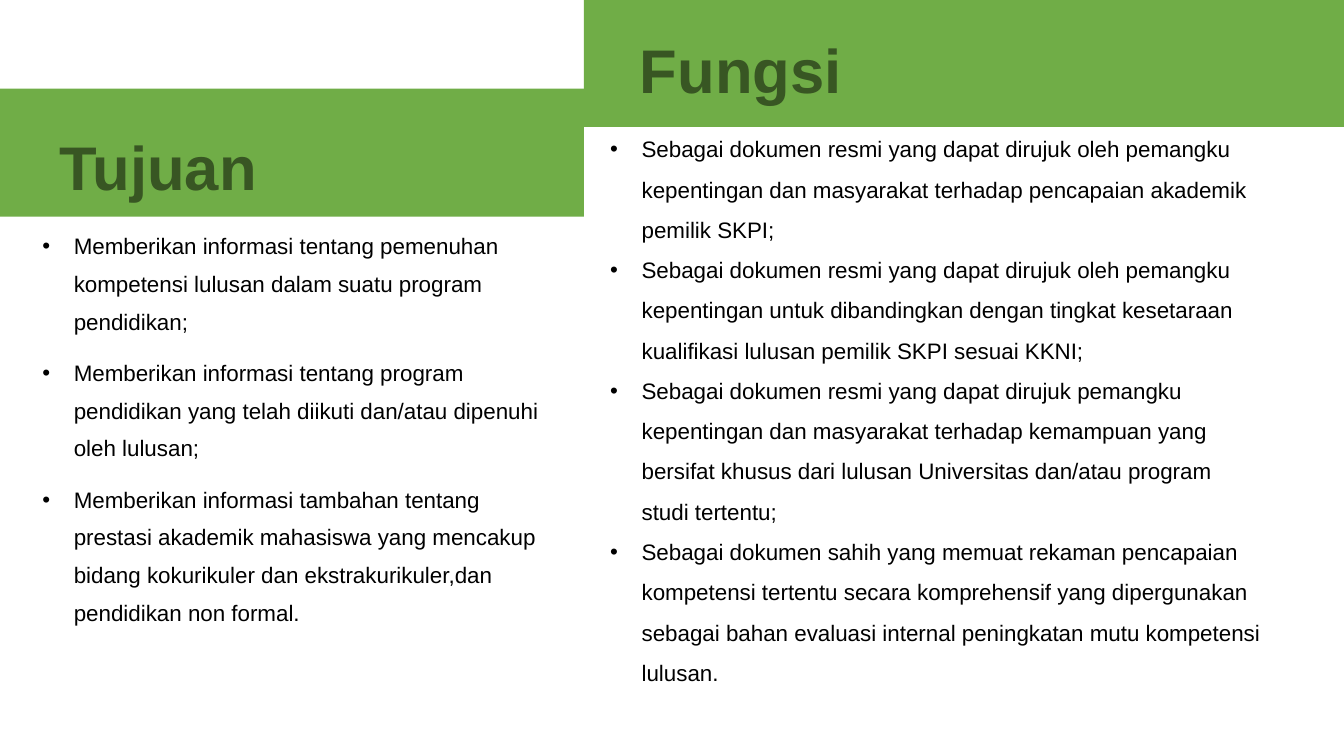
from dataclasses import dataclass

from lxml.etree import SubElement
from pptx import Presentation
from pptx.dml.color import RGBColor
from pptx.enum.shapes import MSO_SHAPE
from pptx.enum.text import MSO_ANCHOR, MSO_AUTO_SIZE, PP_ALIGN
from pptx.oxml.ns import qn
from pptx.util import Pt


@dataclass(frozen=True)
class Theme:
    """Colours, font and type sizes of the slide."""
    green: RGBColor = RGBColor(0x70, 0xAD, 0x47)
    dark: RGBColor = RGBColor(0x38, 0x56, 0x23)
    black: RGBColor = RGBColor(0, 0, 0)
    face: str = "Arial"
    head: Pt = Pt(44)
    text: Pt = Pt(16)


THEME = Theme()
INDENT = Pt(22.5)
SPLIT = 417
WIDE = 960
BAND = 91.44

GOALS = [
    "Memberikan informasi tentang pemenuhan kompetensi lulusan dalam suatu program pendidikan;",
    "Memberikan informasi tentang program pendidikan yang telah diikuti dan/atau dipenuhi oleh lulusan;",
    "Memberikan informasi tambahan tentang prestasi akademik mahasiswa yang mencakup bidang "
    "kokurikuler dan ekstrakurikuler,dan pendidikan non formal.",
]
ROLES = [
    "Sebagai dokumen resmi yang dapat dirujuk oleh pemangku kepentingan dan masyarakat "
    "terhadap pencapaian akademik pemilik SKPI;",
    "Sebagai dokumen resmi yang dapat dirujuk oleh pemangku kepentingan untuk dibandingkan "
    "dengan tingkat kesetaraan kualifikasi lulusan pemilik SKPI sesuai KKNI;",
    "Sebagai dokumen resmi yang dapat dirujuk pemangku kepentingan dan masyarakat terhadap "
    "kemampuan yang bersifat khusus dari lulusan Universitas dan/atau program studi tertentu;",
    "Sebagai dokumen sahih yang memuat rekaman pencapaian kompetensi tertentu secara "
    "komprehensif yang dipergunakan sebagai bahan evaluasi internal peningkatan mutu "
    "kompetensi lulusan.",
]


def apply(item, form):
    """Set each attribute in form on item."""
    for name, value in form.items():
        setattr(item, name, value)


def place(shape, left, top, width, height):
    """Move and size a shape in points."""
    apply(shape, {"left": Pt(left), "top": Pt(top),
                  "width": Pt(width), "height": Pt(height)})


def add_band(slide, left, top, width):
    """Draw a green band behind all the text."""
    box = [Pt(n) for n in (left, top, width, BAND)]
    band = slide.shapes.add_shape(MSO_SHAPE.RECTANGLE, *box)
    band.shadow.inherit = False
    band.fill.solid()
    band.fill.fore_color.rgb = THEME.green
    band.line.fill.background()
    slide.shapes.element.insert(2, band.element)


def style(para, form, font):
    """Format a paragraph and its font."""
    apply(para, {"alignment": PP_ALIGN.LEFT, "space_after": Pt(0), **form})
    apply(para.font, {"name": THEME.face, **font})


def fill_head(shape, text, left, top):
    """Write a bold heading."""
    place(shape, left, top, 228, 106)
    frame = shape.text_frame
    apply(frame, {"text": text, "word_wrap": True,
                  "auto_size": MSO_AUTO_SIZE.NONE,
                  "vertical_anchor": MSO_ANCHOR.MIDDLE})
    para = frame.paragraphs[0]
    style(para, {"line_spacing": 0.9, "space_before": Pt(0)},
          {"size": THEME.head, "bold": True})
    para.font.color.rgb = THEME.dark


def add_dot(para):
    """Give a paragraph a round bullet and a hanging indent."""
    props = para._p.get_or_add_pPr()
    props.set("marL", str(INDENT))
    props.set("indent", str(-INDENT))
    tint = SubElement(SubElement(props, qn("a:buClr")), qn("a:srgbClr"))
    tint.set("val", str(THEME.black))
    SubElement(props, qn("a:buFont")).set("typeface", THEME.face)
    SubElement(props, qn("a:buChar")).set("char", "•")


def fill_list(shape, items, box, pitch, gap, size):
    """Write a bulleted list with its line pitch and paragraph gap."""
    place(shape, *box)
    frame = shape.text_frame
    apply(frame, {"text": "\n".join(items), "word_wrap": True,
                  "auto_size": size, "vertical_anchor": MSO_ANCHOR.TOP})
    for rank, para in enumerate(frame.paragraphs):
        add_dot(para)
        style(para, {"line_spacing": pitch,
                     "space_before": Pt(gap if rank else 0)},
              {"size": THEME.text})
        para.font.color.rgb = THEME.black


def main():
    """Build and save the slide."""
    deck = Presentation()
    apply(deck, {"slide_width": Pt(WIDE), "slide_height": Pt(540)})
    slide = deck.slides.add_slide(deck.slide_layouts[3])
    title, goals, roles = slide.placeholders
    add_band(slide, SPLIT, -0.7, WIDE - SPLIT)
    add_band(slide, 0, 63.4, SPLIT)
    fill_head(title, "Tujuan", 35.3, 69)
    side = slide.shapes.add_textbox(0, 0, 0, 0)
    fill_head(side, "Fungsi", 450, -0.7)
    fill_list(goals, GOALS, (23, 154.8, 381.6, 297.4), 1.4, 10,
              MSO_AUTO_SIZE.NONE)
    fill_list(roles, ROLES, (428.6, 83.5, 480.2, 411), 1.5, 0,
              MSO_AUTO_SIZE.SHAPE_TO_FIT_TEXT)
    deck.save("out.pptx")


if __name__ == "__main__":
    main()
